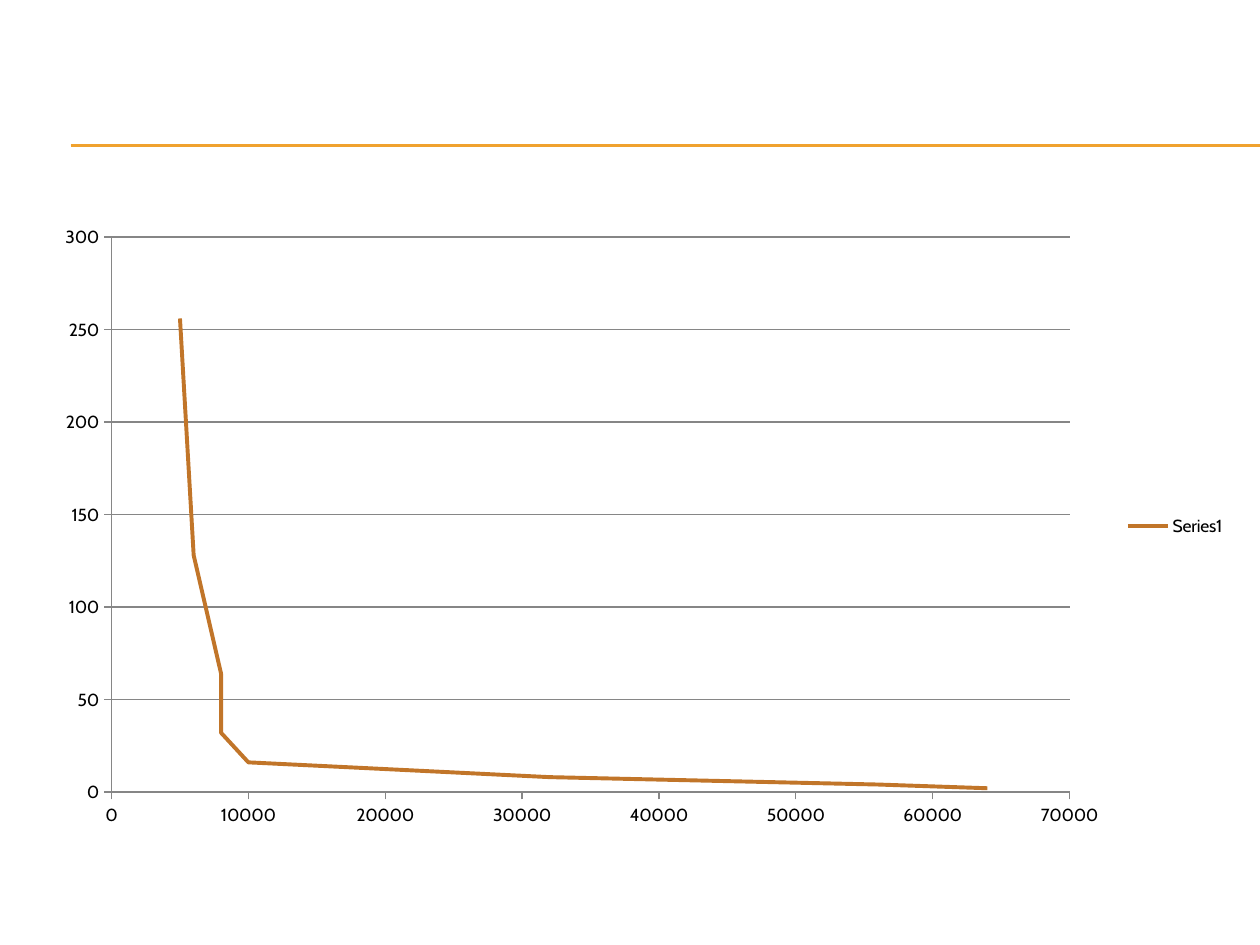
import pptx
import pptx.chart.data
import pptx.dml.color
import pptx.enum.chart
import pptx.enum.shapes
import pptx.oxml.ns
import pptx.util
from lxml import etree

Inches = pptx.util.Inches
COLORS = {"rule": "F0A22E", "curve": "C17529", "axis": "868686", "text": "000000"}
X_VALUES = [64000, 56000, 32000, 10000, 8000, 8000, 6000, 5000]
Y_VALUES = [2 ** power for power in range(1, 9)]


class SlideBuilder:
    """Holds the style and the current slide, and adds each kind of element."""

    def __init__(self, slide, colors, font="Cabin", size=10):
        self.slide = slide
        self.colors = colors
        self.font = font
        self.size = size

    def color(self, name):
        return pptx.dml.color.RGBColor.from_string(self.colors[name])

    def format_line(self, line, color, width):
        line.color.rgb = self.color(color)
        line.width = pptx.util.Pt(width)

    def add_rule(self, left, right, top):
        connector = self.slide.shapes.add_connector(
            pptx.enum.shapes.MSO_CONNECTOR.STRAIGHT,
            Inches(left), Inches(top), Inches(right), Inches(top))
        self.format_line(connector.line, "rule", 0.75)
        etree.SubElement(connector._element.spPr, pptx.oxml.ns.qn("a:effectLst"))

    def format_axis(self, axis, maximum, step, gridlines):
        axis.minimum_scale = 0
        axis.maximum_scale = maximum
        axis.major_unit = step
        axis.has_major_gridlines = gridlines
        axis.major_tick_mark = pptx.enum.chart.XL_TICK_MARK.OUTSIDE
        axis.minor_tick_mark = pptx.enum.chart.XL_TICK_MARK.NONE
        axis.tick_labels.number_format = "General"
        axis.tick_labels.number_format_is_linked = False
        self.format_line(axis.format.line, "axis", 0.75)
        if gridlines:
            self.format_line(axis.major_gridlines.format.line, "axis", 0.75)

    def add_scatter(self, left, top, width, height, name, points):
        data = pptx.chart.data.XyChartData()
        series_data = data.add_series(name)
        for x_value, y_value in points:
            series_data.add_data_point(x_value, y_value)
        chart = self.slide.shapes.add_chart(
            pptx.enum.chart.XL_CHART_TYPE.XY_SCATTER_SMOOTH_NO_MARKERS,
            Inches(left), Inches(top), Inches(width), Inches(height), data).chart
        chart.has_title = False
        chart.font.name = self.font
        chart.font.size = pptx.util.Pt(self.size)
        chart.font.color.rgb = self.color("text")
        chart.has_legend = True
        chart.legend.position = pptx.enum.chart.XL_LEGEND_POSITION.RIGHT
        chart.legend.include_in_layout = False
        self.format_axis(chart.category_axis, 70000, 10000, False)
        self.format_axis(chart.value_axis, 300, 50, True)
        plot = chart.plots[0]
        plot.vary_by_categories = False
        series = plot.series[0]
        series.marker.style = pptx.enum.chart.XL_MARKER_STYLE.NONE
        self.format_line(series.format.line, "curve", 2.25)


def main():
    presentation = pptx.Presentation()
    presentation.slide_width = Inches(10)
    presentation.slide_height = Inches(7.5)
    slide = presentation.slides.add_slide(presentation.slide_layouts[6])
    builder = SlideBuilder(slide, COLORS)
    for top in (1.15, 1.16):
        builder.add_rule(0.56, 10, top)
    builder.add_scatter(0.33, 1.7, 9.5, 4.95, "Series1", zip(X_VALUES, Y_VALUES))
    presentation.save("out.pptx")


if __name__ == "__main__":
    main()
